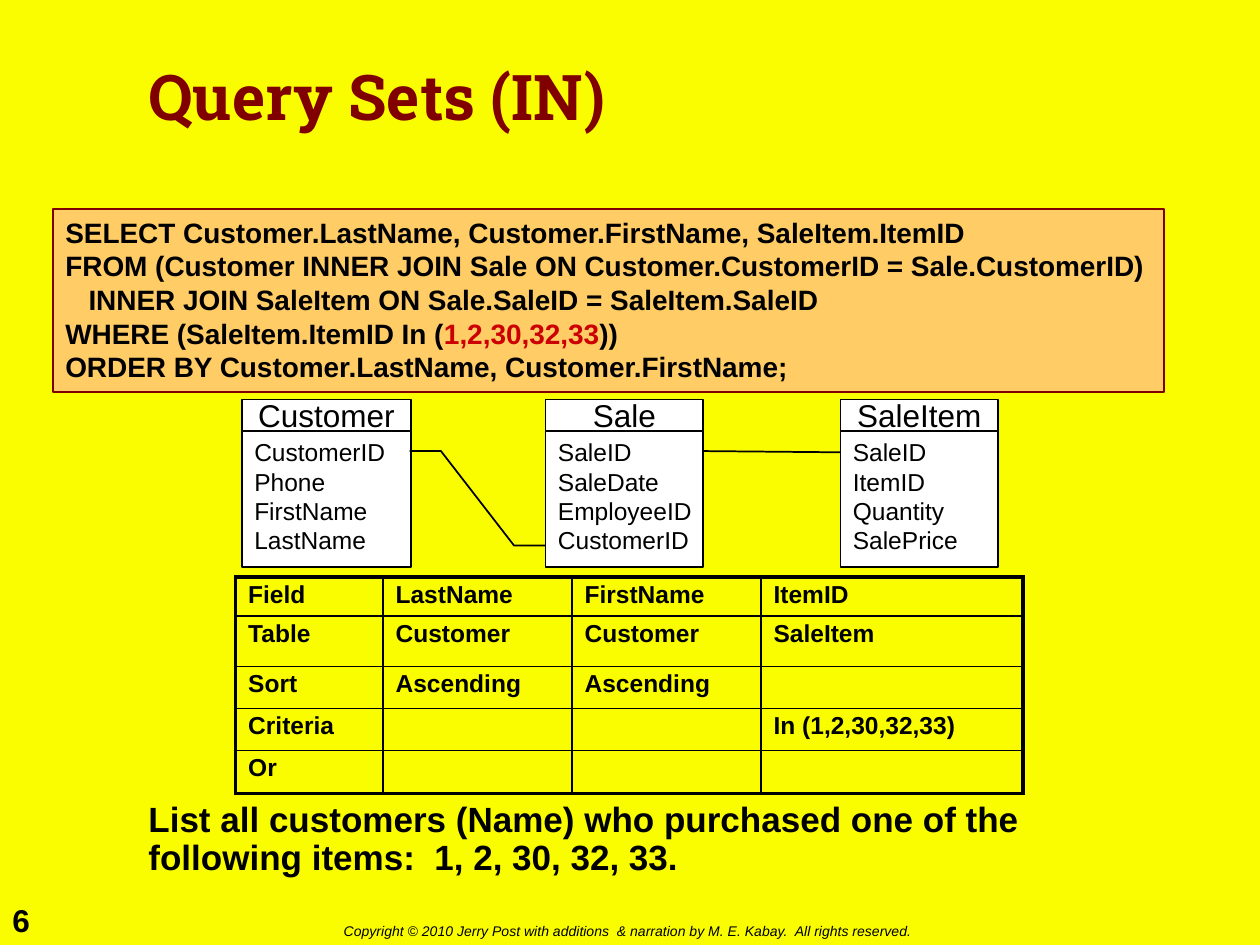
from dataclasses import dataclass

from lxml.etree import SubElement
from pptx import Presentation
from pptx.dml.color import RGBColor
from pptx.enum.shapes import MSO_CONNECTOR, MSO_SHAPE
from pptx.enum.text import MSO_ANCHOR, PP_ALIGN
from pptx.oxml.ns import qn
from pptx.util import Inches, Pt

COLORS = {
    "background": "FAFD00",
    "maroon": "800000",
    "code": "FFCC66",
    "values": "CC0000",
    "white": "FFFFFF",
    "black": "000000",
}
VALUES = "1,2,30,32,33"
HEADER_TOP, HEADER_HEIGHT, FIELDS_HEIGHT = 3.17, 0.25, 1.08


@dataclass(frozen=True)
class Entity:
    name: str
    left: float
    width: float
    fields: tuple[str, ...]


ENTITIES = (
    Entity("Customer", 1.92, 1.34, ("CustomerID", "Phone", "FirstName", "LastName")),
    Entity("Sale", 4.33, 1.25, ("SaleID", "SaleDate", "EmployeeID", "CustomerID")),
    Entity("SaleItem", 6.67, 1.25, ("SaleID", "ItemID", "Quantity", "SalePrice")),
)
SQL = (
    "SELECT Customer.LastName, Customer.FirstName, SaleItem.ItemID",
    "FROM (Customer INNER JOIN Sale ON Customer.CustomerID = Sale.CustomerID)",
    "   INNER JOIN SaleItem ON Sale.SaleID = SaleItem.SaleID",
    f"WHERE (SaleItem.ItemID In ({VALUES}))",
    "ORDER BY Customer.LastName, Customer.FirstName;",
)
QUERY_GRID = (
    ("Field", "LastName", "FirstName", "ItemID"),
    ("Table", "Customer", "Customer", "SaleItem"),
    ("Sort", "Ascending", "Ascending", ""),
    ("Criteria", "", "", f"In ({VALUES})"),
    ("Or", "", "", ""),
)
COLUMN_WIDTHS = (1.17, 1.5, 1.5, 2.08)
ROW_HEIGHTS = (0.31, 0.4, 0.33, 0.33, 0.34)


def rgb(name: str) -> RGBColor:
    return RGBColor.from_string(COLORS[name])


def write_text(frame, lines, *, size, font="Arial", color="black", bold=False,
               italic=False, align=PP_ALIGN.LEFT, anchor=MSO_ANCHOR.TOP,
               spacing=None, wrap=True, highlight=None) -> None:
    frame.word_wrap = wrap
    frame.vertical_anchor = anchor
    for index, line in enumerate(lines):
        paragraph = frame.paragraphs[0] if index == 0 else frame.add_paragraph()
        paragraph.alignment = align
        if spacing:
            paragraph.line_spacing = spacing
        parts = line.partition(highlight) if highlight else (line,)
        for part in filter(None, parts):
            run = paragraph.add_run()
            run.text = part
            run.font.name = font
            run.font.size = Pt(size)
            run.font.bold = bold
            run.font.italic = italic
            run.font.color.rgb = rgb("values" if part == highlight else color)


def add_label(slide, box: tuple, text: str, **text_format) -> None:
    label = slide.shapes.add_textbox(*map(Inches, box))
    write_text(label.text_frame, [text], **text_format)


def set_outline(shape, color: str = "black") -> None:
    shape.line.color.rgb = rgb(color)
    shape.line.width = Pt(1)


def add_panel(slide, box: tuple, lines, *, fill="white", outline="black", **text_format) -> None:
    panel = slide.shapes.add_shape(MSO_SHAPE.RECTANGLE, *map(Inches, box))
    panel.shadow.inherit = False
    panel.fill.solid()
    panel.fill.fore_color.rgb = rgb(fill)
    set_outline(panel, outline)
    write_text(panel.text_frame, lines, wrap=False, **text_format)


def add_entity(slide, entity: Entity) -> None:
    fields_top = HEADER_TOP + HEADER_HEIGHT
    add_panel(slide, (entity.left, fields_top, entity.width, FIELDS_HEIGHT),
              entity.fields, size=14)
    add_panel(slide, (entity.left, HEADER_TOP, entity.width, HEADER_HEIGHT), [entity.name],
              size=18, align=PP_ALIGN.CENTER, anchor=MSO_ANCHOR.MIDDLE)


def set_borders(cell, outer_sides: dict[str, bool]) -> None:
    properties = cell._tc.get_or_add_tcPr()
    for side, is_outer in outer_sides.items():
        border = SubElement(properties, qn(f"a:ln{side}"), w=str(Pt(2.25 if is_outer else 1)))
        fill = SubElement(border, qn("a:solidFill"))
        SubElement(fill, qn("a:srgbClr"), val=COLORS["black"])


def add_query_grid(slide) -> None:
    rows, columns = len(ROW_HEIGHTS), len(COLUMN_WIDTHS)
    grid = slide.shapes.add_table(
        rows, columns, Inches(1.87), Inches(4.58),
        Inches(sum(COLUMN_WIDTHS)), Inches(sum(ROW_HEIGHTS))).table
    grid.first_row = grid.horz_banding = False
    for column, width in zip(grid.columns, COLUMN_WIDTHS):
        column.width = Inches(width)
    for row, height in zip(grid.rows, ROW_HEIGHTS):
        row.height = Inches(height)
    for row, texts in enumerate(QUERY_GRID):
        for column, text in enumerate(texts):
            cell = grid.cell(row, column)
            set_borders(cell, {"L": column == 0, "R": column == columns - 1,
                               "T": row == 0, "B": row == rows - 1})
            cell.fill.background()
            write_text(cell.text_frame, [text], size=14, bold=True, spacing=0.9)
            if not text:
                SubElement(cell.text_frame.paragraphs[0]._p, qn("a:endParaRPr"), sz="1400")


def add_relations(slide) -> None:
    points = [(Inches(x), Inches(y)) for x, y in
              ((3.25, 3.58), (3.5, 3.58), (4.08, 4.33), (4.33, 4.33))]
    builder = slide.shapes.build_freeform(*points[0])
    builder.add_line_segments(points[1:], close=False)
    customer_to_sale = builder.convert_to_shape()
    customer_to_sale.shadow.inherit = False
    customer_to_sale.fill.background()
    set_outline(customer_to_sale)

    sale_to_item = slide.shapes.add_connector(
        MSO_CONNECTOR.STRAIGHT, Inches(5.58), Inches(3.58), Inches(6.67), Inches(3.59))
    set_outline(sale_to_item)
    SubElement(sale_to_item._element.spPr, qn("a:effectLst"))


def main() -> None:
    presentation = Presentation()
    presentation.slide_width, presentation.slide_height = Inches(10), Inches(7.5)
    slide = presentation.slides.add_slide(presentation.slide_layouts[6])
    slide.background.fill.solid()
    slide.background.fill.fore_color.rgb = rgb("background")

    add_label(slide, (0, 7.1, 0.5, 0.4), "6", size=18, bold=True)
    add_label(slide, (2.63, 7.27, 4.84, 0.24),
              "Copyright © 2010 Jerry Post with additions  & narration by M. E. Kabay."
              "  All rights reserved.", size=8, italic=True)
    add_label(slide, (1.08, 0.17, 7.83, 1.25), "Query Sets (IN)", size=36, font="Roboto Slab",
              color="maroon", bold=True, anchor=MSO_ANCHOR.MIDDLE, spacing=0.9)
    add_label(slide, (1.08, 6.32, 7.76, 0.59),
              "List all customers (Name) who purchased one of the following items:"
              "  1, 2, 30, 32, 33.", size=20, bold=True, spacing=0.9)
    add_panel(slide, (0.42, 1.66, 8.82, 1.45), SQL, fill="code", outline="maroon",
              size=16, bold=True, highlight=VALUES)
    for entity in ENTITIES:
        add_entity(slide, entity)
    add_query_grid(slide)
    add_relations(slide)
    presentation.save("out.pptx")


if __name__ == "__main__":
    main()
